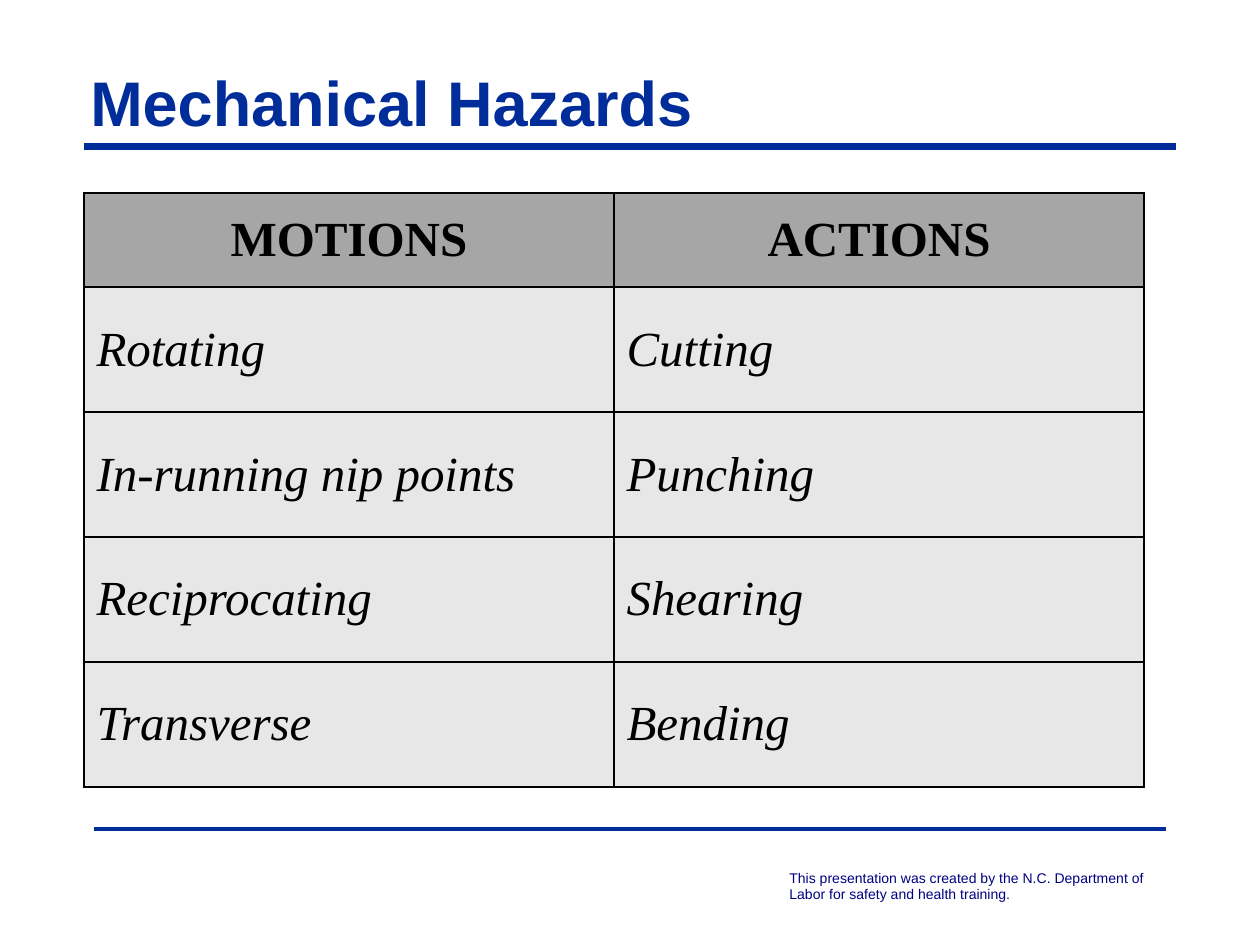
"""Build the Mechanical Hazards slide with its table of motions and actions."""
from lxml.etree import SubElement
from pptx import Presentation
from pptx.dml.color import RGBColor
from pptx.enum.shapes import MSO_CONNECTOR as Connector
from pptx.enum.text import MSO_ANCHOR as Anchor, MSO_AUTO_SIZE as AutoSize, PP_ALIGN as Align
from pptx.oxml import parse_xml
from pptx.oxml.ns import nsdecls, qn
from pptx.util import Emu, Pt

BLUE = RGBColor(0x01, 0x2D, 0x9A)
NAVY = RGBColor(0x00, 0x00, 0x80)
BLACK = RGBColor(0x00, 0x00, 0x00)
HEADER_GRAY = RGBColor(0xA6, 0xA6, 0xA6)
BODY_GRAY = RGBColor(0xE7, 0xE7, 0xE7)

TITLE = "Mechanical Hazards"
HAZARDS = [
    ("MOTIONS", "ACTIONS"),
    ("Rotating", "Cutting"),
    ("In-running nip points", "Punching"),
    ("Reciprocating", "Shearing"),
    ("Transverse", "Bending"),
]
CREDIT = [
    "This presentation was created by the N.C. Department of",
    "Labor for safety and health training.",
]
RULES = [(84, 1176, 147, 4), (94, 1166, 829, 2)]

TITLE_BOX = (84, 63, 1092, 76)
CREDIT_BOX = (777, 863, 388, 47)
TABLE_LEFT, TABLE_TOP, COLUMN_WIDTH = 84, 193, 530
HEADER_HEIGHT, ROW_HEIGHT = 94, 125

TITLE_FONT = {"name": "Arial", "size": Pt(36), "bold": True}
CREDIT_FONT = {"name": "Arial", "size": Pt(8)}
HEADER_FONT = {"name": "Times New Roman", "size": Pt(28), "bold": True, "italic": False}
BODY_FONT = {**HEADER_FONT, "bold": False, "italic": True}


def px(length):
    return Emu(round(length * 914400 / 126))


def format_font(paragraph, values, color):
    for name, value in values.items():
        setattr(paragraph.font, name, value)
    paragraph.font.color.rgb = color


def add_rule(slide, left, right, y, width):
    rule = slide.shapes.add_connector(Connector.STRAIGHT, px(left), px(y), px(right), px(y))
    rule.line.color.rgb = BLUE
    rule.line.width = Pt(width)
    SubElement(rule._element.spPr, qn("a:effectLst"))


def add_title(slide):
    title = slide.shapes.title
    title.left, title.top, title.width, title.height = map(px, TITLE_BOX)
    frame = title.text_frame
    frame.text = TITLE
    settings = {
        "margin_left": Pt(3.6), "margin_right": Pt(3.6), "margin_top": 0, "margin_bottom": 0,
        "vertical_anchor": Anchor.MIDDLE, "auto_size": AutoSize.SHAPE_TO_FIT_TEXT,
    }
    for name, value in settings.items():
        setattr(frame, name, value)
    frame.paragraphs[0].alignment = Align.LEFT
    format_font(frame.paragraphs[0], TITLE_FONT, BLUE)


def add_credit(slide):
    frame = slide.shapes.add_textbox(*map(px, CREDIT_BOX)).text_frame
    frame.word_wrap = True
    frame.auto_size = AutoSize.SHAPE_TO_FIT_TEXT
    frame.text = "\n".join(CREDIT)
    for paragraph in frame.paragraphs:
        format_font(paragraph, CREDIT_FONT, NAVY)


def add_borders(cell):
    properties = cell._tc.get_or_add_tcPr()
    for index, side in enumerate(("lnL", "lnR", "lnT", "lnB")):
        border = parse_xml(
            f'<a:{side} {nsdecls("a")} w="{Pt(1)}"><a:solidFill>'
            f'<a:srgbClr val="{BLACK}"/></a:solidFill></a:{side}>'
        )
        properties.insert(index, border)


def add_hazard_table(slide):
    heights = [HEADER_HEIGHT] + [ROW_HEIGHT] * (len(HAZARDS) - 1)
    columns = len(HAZARDS[0])
    table = slide.shapes.add_table(
        len(HAZARDS), columns, px(TABLE_LEFT), px(TABLE_TOP),
        px(COLUMN_WIDTH * columns), px(sum(heights)),
    ).table
    for column in table.columns:
        column.width = px(COLUMN_WIDTH)
    for row_index, (row, height, texts) in enumerate(zip(table.rows, heights, HAZARDS)):
        row.height = px(height)
        is_header = row_index == 0
        for cell, text in zip(row.cells, texts):
            cell.text = text
            cell.vertical_anchor = Anchor.MIDDLE
            cell.fill.solid()
            cell.fill.fore_color.rgb = HEADER_GRAY if is_header else BODY_GRAY
            add_borders(cell)
            paragraph = cell.text_frame.paragraphs[0]
            paragraph.alignment = Align.CENTER if is_header else Align.LEFT
            format_font(paragraph, HEADER_FONT if is_header else BODY_FONT, BLACK)


def main():
    presentation = Presentation()
    presentation.slide_width, presentation.slide_height = px(1260), px(945)
    slide = presentation.slides.add_slide(presentation.slide_layouts[5])
    for rule in RULES:
        add_rule(slide, *rule)
    add_credit(slide)
    add_title(slide)
    add_hazard_table(slide)
    presentation.save("out.pptx")


if __name__ == "__main__":
    main()
